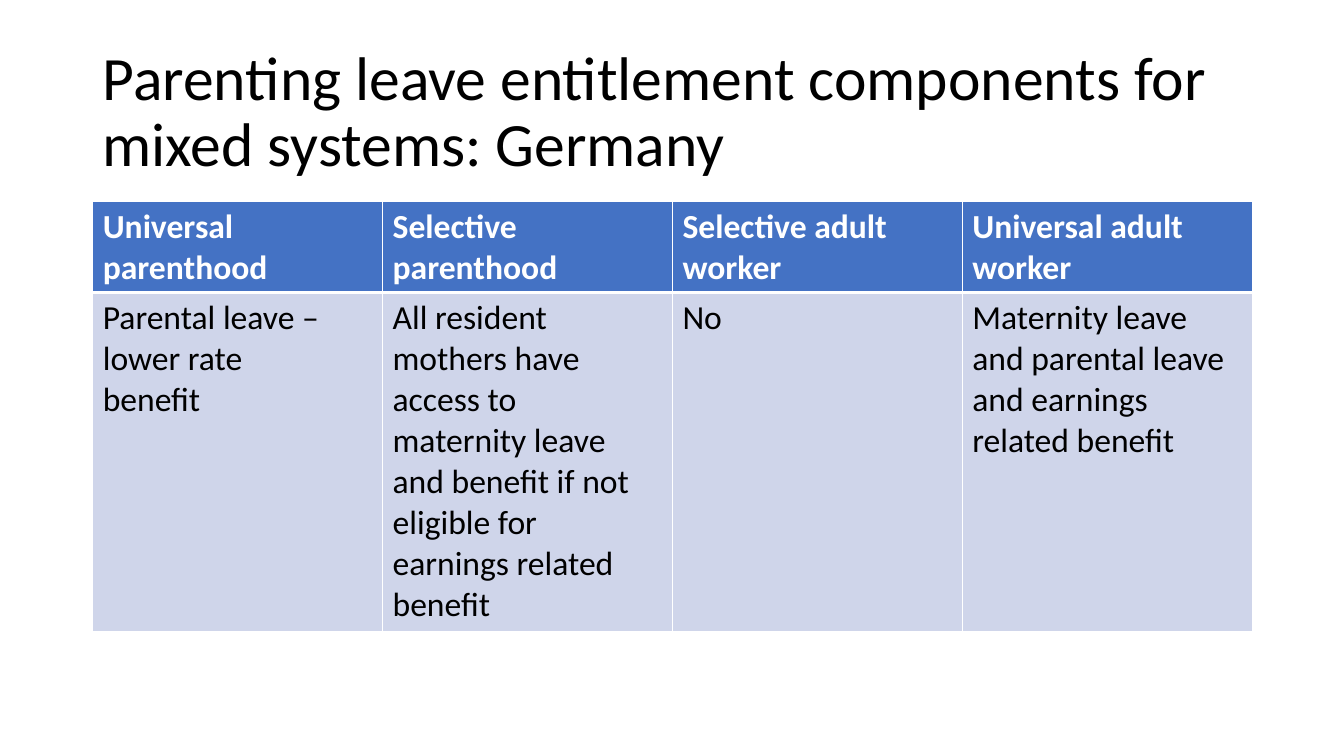
from dataclasses import dataclass

from lxml import etree
from pptx import Presentation
from pptx import util as u
from pptx.dml.color import RGBColor
from pptx.enum import text
from pptx.oxml import ns


@dataclass(frozen=True)
class Theme:
    font: str = "Calibri"
    ink: str = "000000"
    paper: str = "FFFFFF"
    head: str = "4472C4"
    body: str = "CFD5EA"
    title: float = 44
    cell: float = 24
    thin: float = 1
    thick: float = 3


@dataclass(frozen=True)
class Column:
    head: str
    lines: tuple[str, ...]


THEME = Theme()
WIDTH, HEIGHT = u.Inches(13.33), u.Inches(7.5)
LEFT, SPAN = round(WIDTH * 0.069), round(WIDTH * 0.8627)
TITLE = "Parenting leave entitlement components for mixed systems: Germany"
COLUMNS = (
    Column("Universal parenthood", ("Parental leave –", "lower rate", "benefit")),
    Column("Selective parenthood", (
        "All resident", "mothers have", "access to", "maternity leave",
        "and benefit if not", "eligible for", "earnings related benefit")),
    Column("Selective adult worker", ("No",)),
    Column("Universal adult worker", (
        "Maternity leave", "and parental leave", "and earnings",
        "related benefit")),
)


def style(frame, size: float, color: str, bold: bool = False) -> None:
    for para in frame.paragraphs:
        for run in para.runs:
            run.font.name = THEME.font
            run.font.size = u.Pt(size)
            run.font.bold = bold
            run.font.color.rgb = RGBColor.from_string(color)


def border(cell, top: float, base: float) -> None:
    props = cell._tc.get_or_add_tcPr()
    sides = {"L": THEME.thin, "R": THEME.thin, "T": top, "B": base}
    for spot, (side, width) in enumerate(sides.items()):
        line = etree.Element(ns.qn(f"a:ln{side}"), w=str(u.Pt(width)))
        fill = etree.SubElement(line, ns.qn("a:solidFill"))
        etree.SubElement(fill, ns.qn("a:srgbClr"), val=THEME.paper)
        props.insert(spot, line)


def paint(cell, words: str, fill: str, color: str, bold: bool,
          top: float, base: float) -> None:
    cell.text_frame.text = words
    style(cell.text_frame, THEME.cell, color, bold)
    cell.fill.solid()
    cell.fill.fore_color.rgb = RGBColor.from_string(fill)
    border(cell, top, base)


def add_title(slide) -> None:
    box = slide.shapes.add_textbox(
        LEFT, round(HEIGHT * 0.0533), SPAN, round(HEIGHT * 0.1933))
    frame = box.text_frame
    frame.word_wrap = True
    frame.vertical_anchor = text.MSO_ANCHOR.MIDDLE
    frame.text = TITLE
    frame.paragraphs[0].line_spacing = 0.9
    style(frame, THEME.title, THEME.ink)


def add_grid(slide) -> None:
    rows = (round(HEIGHT * 0.12), round(HEIGHT * 0.4487))
    table = slide.shapes.add_table(
        len(rows), len(COLUMNS), LEFT, round(HEIGHT * 0.2667),
        SPAN, sum(rows)).table
    for row, tall in zip(table.rows, rows):
        row.height = tall
    for spot, item in enumerate(COLUMNS):
        table.columns[spot].width = SPAN // len(COLUMNS)
        paint(table.cell(0, spot), item.head, THEME.head, THEME.paper,
              True, THEME.thin, THEME.thick)
        paint(table.cell(1, spot), "\n".join(item.lines), THEME.body,
              THEME.ink, False, THEME.thick, THEME.thin)


def main() -> None:
    deck = Presentation()
    deck.slide_width, deck.slide_height = WIDTH, HEIGHT
    slide = deck.slides.add_slide(deck.slide_layouts[6])
    add_title(slide)
    add_grid(slide)
    deck.save("out.pptx")


if __name__ == "__main__":
    main()
